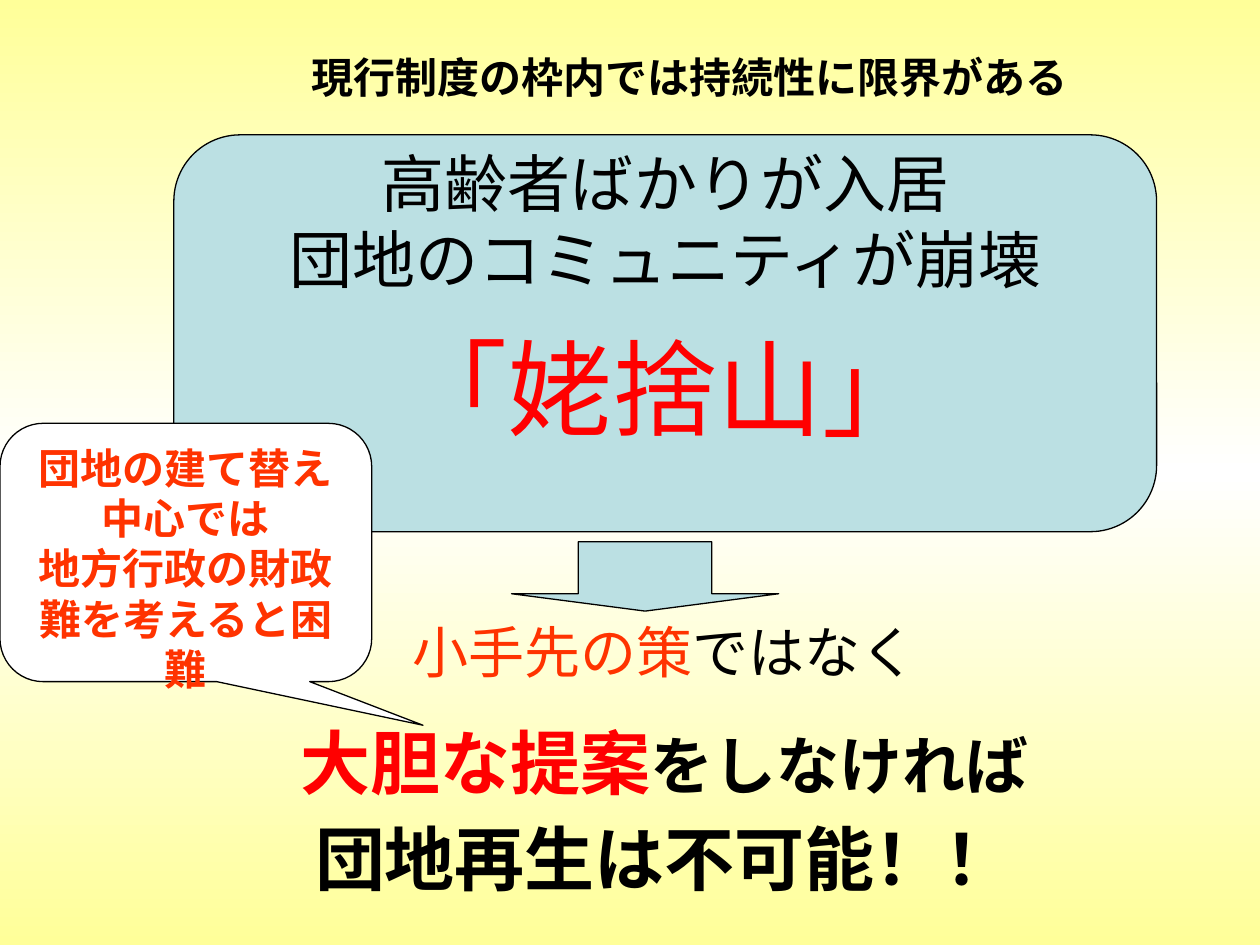
from copy import deepcopy
from dataclasses import dataclass

from pptx import Presentation
from pptx.dml.color import RGBColor as RGB
from pptx.enum.shapes import MSO_SHAPE as Kind
from pptx.enum.text import MSO_ANCHOR as Anchor, PP_ALIGN as Align
from pptx.util import Inches, Pt


@dataclass(frozen=True)
class Theme:
    font: str = "Arial"
    black: str = "000000"
    red: str = "FF0000"
    orange: str = "FF3300"
    white: str = "FFFFFF"
    blue: str = "BBE0E3"
    yellow: str = "FFFF99"
    small: int = 24
    medium: int = 32
    large: int = 36
    bold: int = 40
    huge: int = 60
    line: float = 0.75


T = Theme()


def paint_back(slide):
    """Fade from yellow to white in the middle and back to yellow."""
    fill = slide.background.fill
    fill.gradient()
    fill.gradient_angle = 90
    first = fill.gradient_stops[0]._gs
    first.addnext(deepcopy(first))
    stops = zip(fill.gradient_stops, (0, 0.5, 1), (T.yellow, T.white, T.yellow))
    for stop, place, color in stops:
        stop.position = place
        stop.color.rgb = RGB.from_string(color)


def add_box(slide, kind, at, color, adjust):
    shape = slide.shapes.add_shape(kind, *map(Inches, at))
    shape.shadow.inherit = False
    shape.fill.solid()
    shape.fill.fore_color.rgb = RGB.from_string(color)
    shape.line.color.rgb = RGB.from_string(T.black)
    shape.line.width = Pt(T.line)
    for i, value in enumerate(adjust):
        shape.adjustments[i] = value
    return shape


def add_label(slide, at):
    frame = slide.shapes.add_textbox(*map(Inches, at)).text_frame
    frame.word_wrap = True
    return frame


def add_para(frame, *runs, before=0, spacing=None, bold=False):
    """Add a centred paragraph of (text, size, color) runs."""
    para = frame.paragraphs[0]
    if para.runs:
        para = frame.add_paragraph()
    para.alignment = Align.CENTER
    para.space_before = Pt(before)
    if spacing:
        para.line_spacing = spacing
    for text, size, color in runs:
        run = para.add_run()
        run.text = text
        run.font.name = T.font
        run.font.size = Pt(size)
        run.font.bold = bold
        run.font.color.rgb = RGB.from_string(color)


def add_problem(slide):
    box = add_box(slide, Kind.ROUNDED_RECTANGLE, (1.38, 1.07, 7.8, 3.15),
                  T.blue, [0.167])
    frame = box.text_frame
    frame.word_wrap = False
    frame.vertical_anchor = Anchor.MIDDLE
    frame.margin_bottom = Inches(0.62)
    for text in ("高齢者ばかりが入居", "団地のコミュニティが崩壊"):
        add_para(frame, (text, T.large, T.black))
    add_para(frame, ("「姥捨山」", T.huge, T.red), before=16)


def add_answer(slide):
    frame = add_label(slide, (1.14, 4.85, 8.27, 2.43))
    add_para(frame, ("小手先の策", T.medium, T.orange),
             ("ではなく", T.medium, T.black))
    add_para(frame, ("大胆な提案", T.bold, T.red),
             ("をしなければ", T.large, T.black), before=20, bold=True)
    add_para(frame, ("団地再生は不可能！！", T.bold, T.black),
             before=20, spacing=0.7, bold=True)


def add_title(slide):
    frame = add_label(slide, (1.77, 0.36, 7.4, 1.1))
    add_para(frame, ("現行制度の枠内では持続性に限界がある", T.small, T.black),
             bold=True)


def add_callout(slide):
    box = add_box(slide, Kind.ROUNDED_RECTANGULAR_CALLOUT,
                  (0, 3.36, 2.95, 2.05), T.white, [0.638, 0.669, 0.167])
    frame = box.text_frame
    frame.word_wrap = True
    frame.vertical_anchor = Anchor.TOP
    for text in ("団地の建て替え中心では", "地方行政の財政難を考えると困難"):
        add_para(frame, (text, T.small, T.orange), bold=True)


def main():
    deck = Presentation()
    deck.slide_width, deck.slide_height = Inches(10), Inches(7.5)
    slide = deck.slides.add_slide(deck.slide_layouts[6])
    paint_back(slide)
    add_problem(slide)
    add_answer(slide)
    add_box(slide, Kind.DOWN_ARROW, (4.06, 4.3, 2.12, 0.55), T.blue, [0.5, 0.25])
    add_title(slide)
    add_callout(slide)
    deck.save("out.pptx")


if __name__ == "__main__":
    main()
